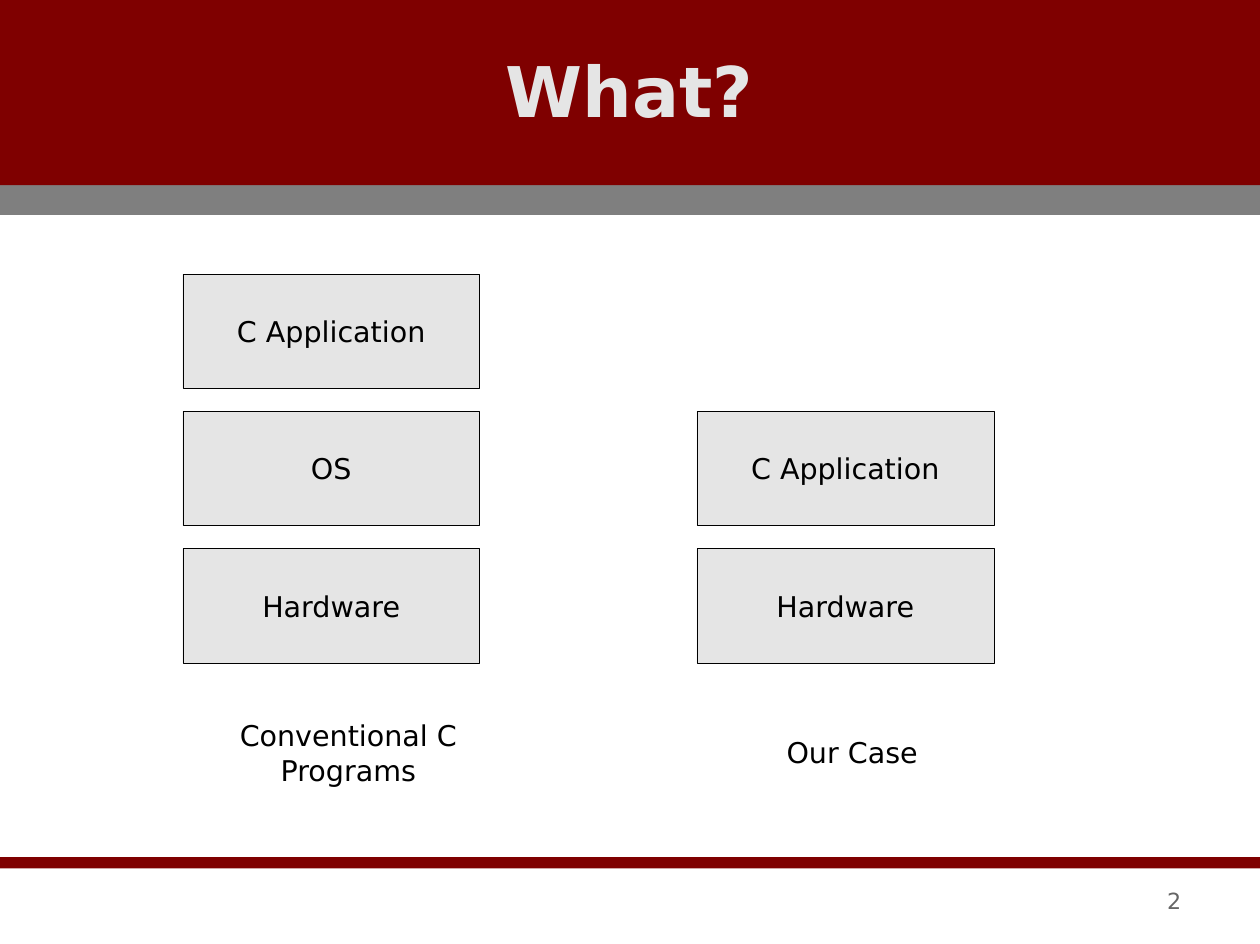
import pptx
import pptx.dml.color
import pptx.enum.shapes
import pptx.enum.text
import pptx.util
from pptx.util import Inches

SLIDE_WIDTH, SLIDE_HEIGHT = 11.03, 8.26
FONT = "DejaVu Sans"
COLOURS = {
    "maroon": "7F0000",
    "grey": "7F7F7F",
    "light": "E5E5E5",
    "black": "000000",
    "number": "666666",
}

# top, height, colour
BARS = [(1.62, 0.26, "grey"), (0, 1.62, "maroon"), (7.5, 0.1, "maroon")]

# left, layers from top to bottom
STACKS = [
    (1.6, ["C Application", "OS", "Hardware"]),
    (6.1, ["C Application", "Hardware"]),
]
LAYER_WIDTH, LAYER_HEIGHT, LAYER_PITCH = 2.6, 1, 1.2
STACK_BOTTOM = 5.8

# text, (left, top, width, height), size, colour, bold
LABELS = [
    ("What?", (4.41, 0.4, 2.2, 0.76), 44, "light", True),
    ("2", (10.18, 7.76, 0.2, 0.24), 14, "number", False),
    ("Conventional C Programs", (1.48, 6.42, 3.14, 0.33), 18, "black", False),
    ("Our Case", (6.88, 6.42, 1.16, 0.33), 18, "black", False),
]


def rgb(name):
    return pptx.dml.color.RGBColor.from_string(COLOURS[name])


def write(shape, text, size, colour, bold=False):
    """Centre one line of text in the shape, without margins."""
    frame = shape.text_frame
    frame.margin_left = frame.margin_right = 0
    frame.margin_top = frame.margin_bottom = 0
    frame.vertical_anchor = pptx.enum.text.MSO_ANCHOR.MIDDLE
    frame.word_wrap = False
    para = frame.paragraphs[0]
    para.text = text
    para.alignment = pptx.enum.text.PP_ALIGN.CENTER
    para.font.name = FONT
    para.font.size = pptx.util.Pt(size)
    para.font.bold = bold
    para.font.color.rgb = rgb(colour)


def add_rectangle(page, area, fill):
    box = page.shapes.add_shape(
        pptx.enum.shapes.MSO_SHAPE.RECTANGLE, *map(Inches, area))
    box.shadow.inherit = False
    box.fill.solid()
    box.fill.fore_color.rgb = rgb(fill)
    box.line.fill.background()
    return box


def main():
    deck = pptx.Presentation()
    deck.slide_width = Inches(SLIDE_WIDTH)
    deck.slide_height = Inches(SLIDE_HEIGHT)
    page = deck.slides.add_slide(deck.slide_layouts[6])

    for top, height, colour in BARS:
        add_rectangle(page, (0, top, SLIDE_WIDTH, height), colour)

    for left, layers in STACKS:
        for level, layer in enumerate(reversed(layers)):
            top = STACK_BOTTOM - LAYER_HEIGHT - level * LAYER_PITCH
            box = add_rectangle(
                page, (left, top, LAYER_WIDTH, LAYER_HEIGHT), "light")
            box.line.color.rgb = rgb("black")
            box.line.width = pptx.util.Pt(0.25)
            write(box, layer, 18, "black")

    for text, area, size, colour, bold in LABELS:
        box = page.shapes.add_textbox(*map(Inches, area))
        write(box, text, size, colour, bold)

    deck.save("out.pptx")


if __name__ == "__main__":
    main()
